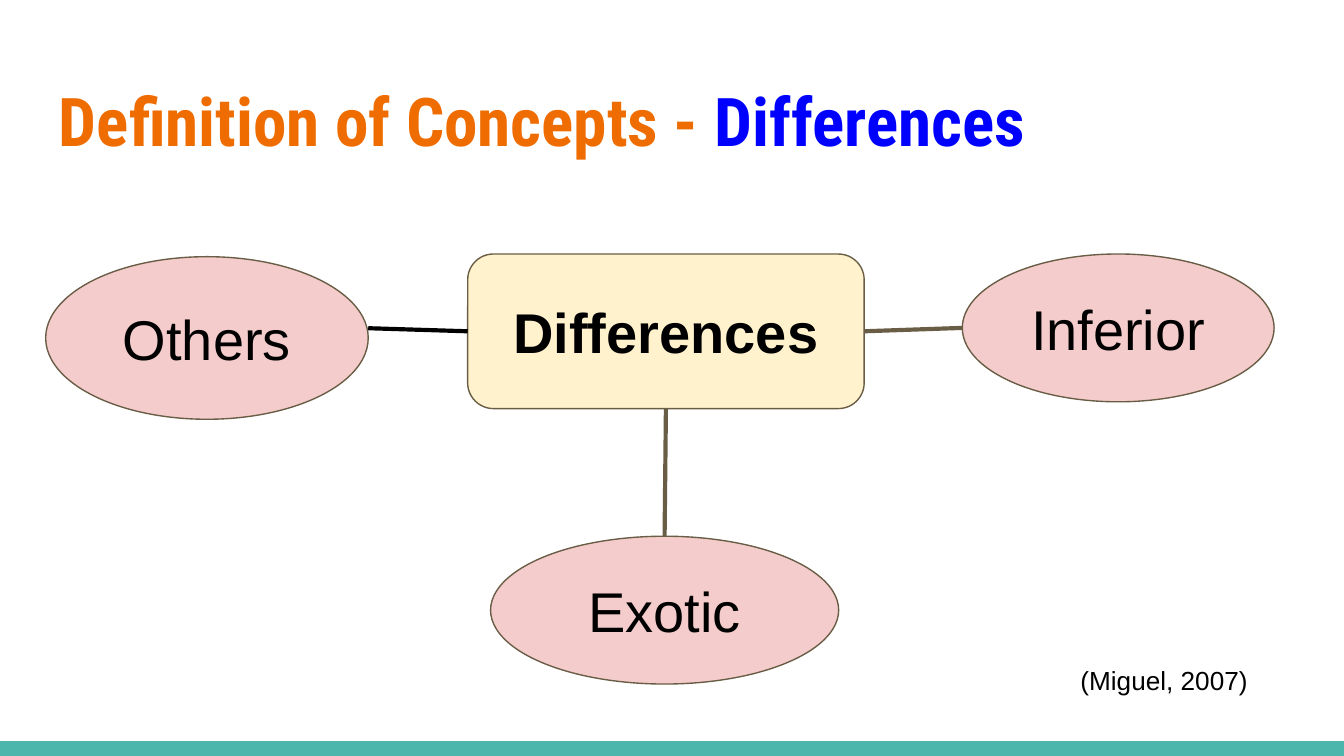
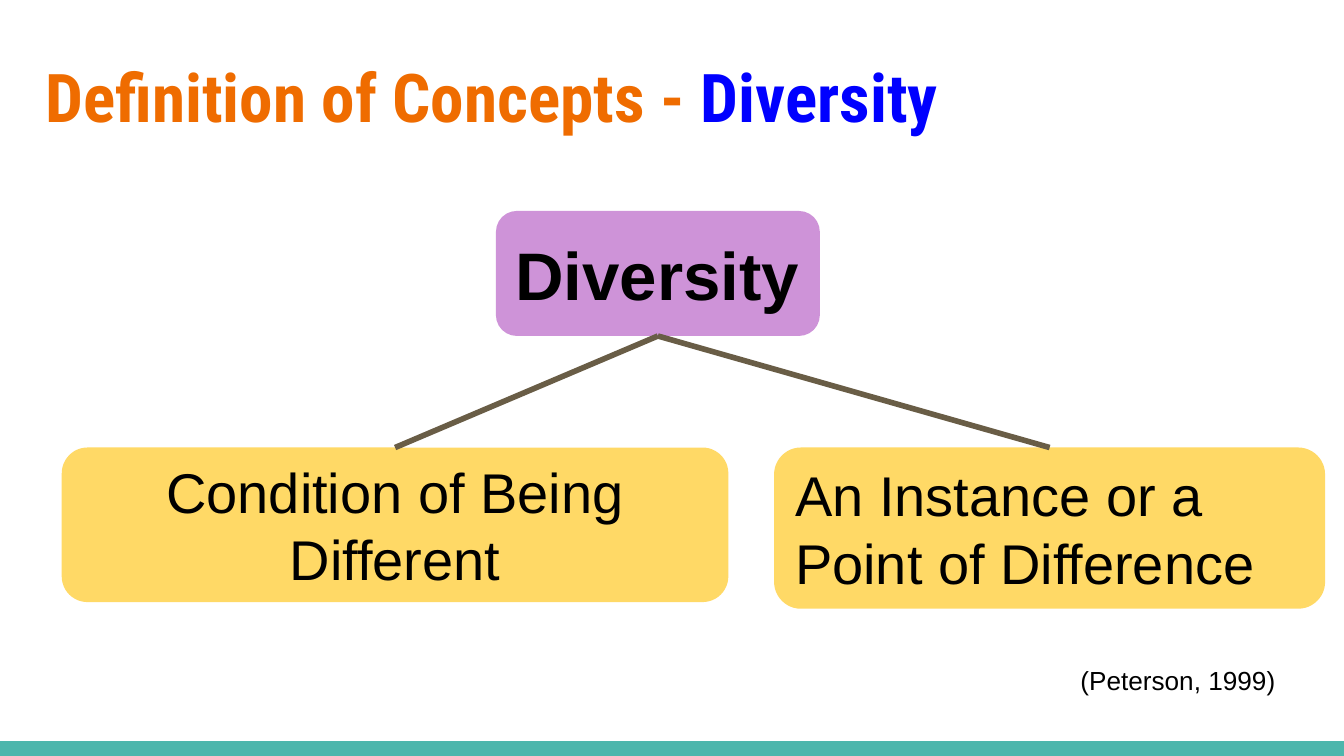
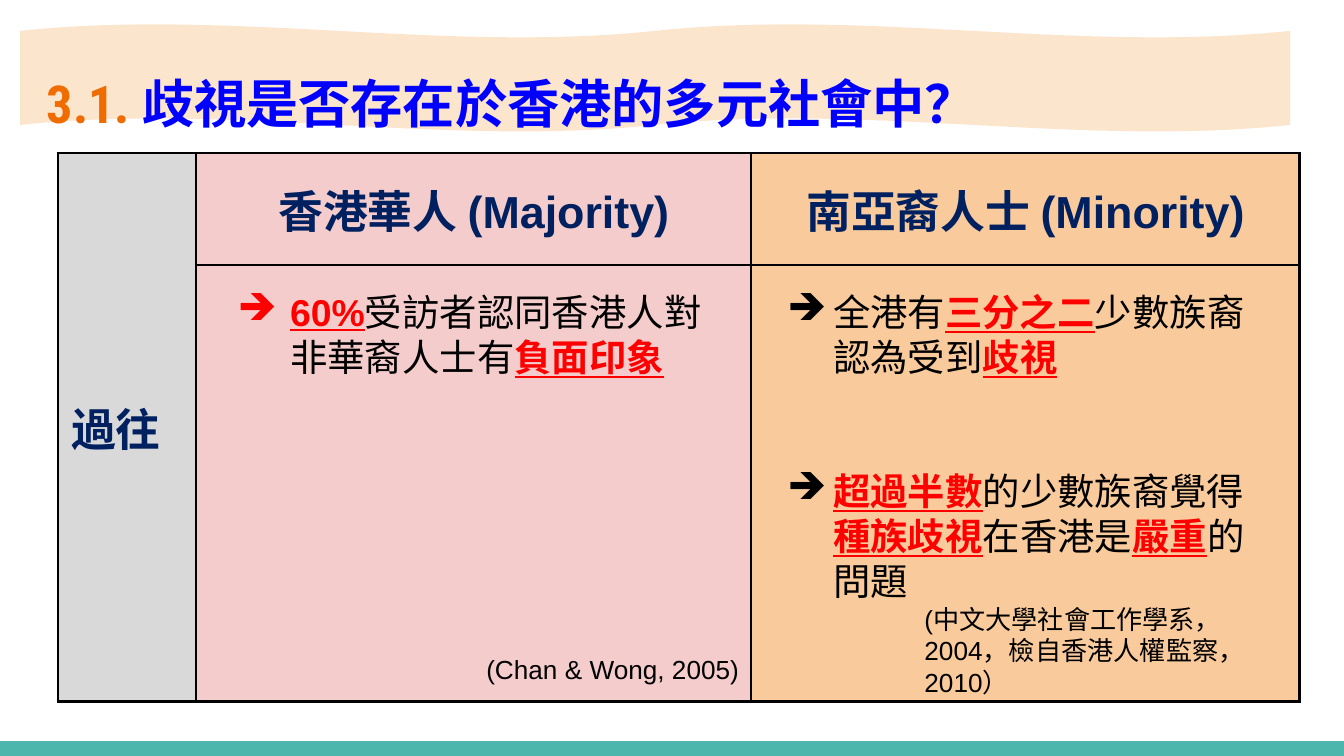
import pptx
import pptx.util
import pptx.dml.color
import pptx.enum.shapes
import pptx.enum.text
import pptx.oxml.ns
import lxml.etree

RGBColor = pptx.dml.color.RGBColor
SHAPES = pptx.enum.shapes.MSO_SHAPE
ALIGN = pptx.enum.text.PP_ALIGN
ANCHOR = pptx.enum.text.MSO_ANCHOR

BLACK = RGBColor(0x00, 0x00, 0x00)
ORANGE = RGBColor(0xEF, 0x6C, 0x00)
BLUE = RGBColor(0x00, 0x00, 0xFF)
RED = RGBColor(0xFF, 0x00, 0x00)
NAVY = RGBColor(0x00, 0x20, 0x60)
TEAL = RGBColor(0x4D, 0xB6, 0xAC)
BROWN = RGBColor(0x69, 0x5D, 0x46)
CREAM = RGBColor(0xFF, 0xF2, 0xCC)
PINK = RGBColor(0xF4, 0xCC, 0xCC)
PURPLE = RGBColor(0xCE, 0x93, 0xD8)
YELLOW = RGBColor(0xFF, 0xD9, 0x66)
GRAY = RGBColor(0xD9, 0xD9, 0xD9)
PEACH = RGBColor(0xF9, 0xCB, 0x9C)
PALE_PEACH = RGBColor(0xFC, 0xE5, 0xCD)

BODY_FONT = "Arial"
LIST_FONT = "Lato"
TITLE_FONT = "Roboto Condensed"

# The slide is a grid of 100 columns and 56.25 rows of square cells.
COLUMNS, ROWS = 100, 56.25
SLIDE_WIDTH = pptx.util.Inches(10)
UNIT = SLIDE_WIDTH / COLUMNS
BAND_ROWS = 1.1
CITATION_AREA = (79.4, 48.4, 17.2, 4.4)


def grid(*counts):
    """Turn counts of grid cells into lengths."""
    return [pptx.util.Emu(round(count * UNIT)) for count in counts]


def add_run(para, text, size, color=BLACK, bold=False, font=BODY_FONT, underline=False):
    span = para.add_run()
    span.text = text
    span.font.size = pptx.util.Pt(size)
    span.font.name = font
    span.font.bold = bold
    span.font.underline = underline
    span.font.color.rgb = color


def prepare_frame(frame, anchor):
    frame.word_wrap = True
    frame.vertical_anchor = anchor
    frame.margin_left = frame.margin_right = pptx.util.Inches(0.1)
    frame.margin_top = frame.margin_bottom = pptx.util.Inches(0.1)
    return frame


def add_text_frame(slide, area, anchor=ANCHOR.TOP):
    return prepare_frame(slide.shapes.add_textbox(*grid(*area)).text_frame, anchor)


def add_panel(slide, kind, area, fill, outline=None):
    panel = slide.shapes.add_shape(kind, *grid(*area))
    panel.shadow.inherit = False
    panel.fill.solid()
    panel.fill.fore_color.rgb = fill
    if outline is None:
        panel.line.fill.background()
    else:
        panel.line.color.rgb = outline
        panel.line.width = pptx.util.Pt(0.75)
    return panel


def add_node(slide, kind, area, text, fill, outline=None, size=30, bold=False,
             align=ALIGN.CENTER):
    node = add_panel(slide, kind, area, fill, outline)
    para = prepare_frame(node.text_frame, ANCHOR.MIDDLE).paragraphs[0]
    para.alignment = align
    add_run(para, text, size, bold=bold)
    return node


def edge_point(node, across, down):
    """Point at the given shares of a node's width and height."""
    return (node.left + round(node.width * across),
            node.top + round(node.height * down))


def add_link(slide, start, end, color=BROWN, width=2.25):
    link = slide.shapes.add_connector(
        pptx.enum.shapes.MSO_CONNECTOR.STRAIGHT, *start, *end)
    link.line.color.rgb = color
    link.line.width = pptx.util.Pt(width)
    lxml.etree.SubElement(link._element.spPr, pptx.oxml.ns.qn("a:effectLst"))


def add_title(slide, area, lead, topic, size=36):
    para = add_text_frame(slide, area).paragraphs[0]
    for text, color in ((lead, ORANGE), (topic, BLUE)):
        add_run(para, text, size, color, True, TITLE_FONT)
    return para


def add_citation(slide, text, area=CITATION_AREA, anchor=ANCHOR.MIDDLE):
    add_run(add_text_frame(slide, area, anchor).paragraphs[0], text, 14)


def add_arrow_bullet(para, indent, hanging, color):
    properties = para._p.get_or_add_pPr()
    properties.set("marL", str(pptx.util.Inches(indent)))
    properties.set("indent", str(-pptx.util.Inches(hanging)))
    bullet_color = lxml.etree.SubElement(properties, pptx.oxml.ns.qn("a:buClr"))
    lxml.etree.SubElement(bullet_color, pptx.oxml.ns.qn("a:srgbClr"), val=str(color))
    lxml.etree.SubElement(properties, pptx.oxml.ns.qn("a:buChar"), char="➔")


def add_findings(slide, area, findings, indent, hanging, bullet_color, font):
    """List findings; each is a list of (text, stressed) pairs."""
    frame = add_text_frame(slide, area)
    for index, finding in enumerate(findings):
        para = frame.add_paragraph() if index else frame.paragraphs[0]
        if index:
            para.space_before = pptx.util.Pt(48)
        add_arrow_bullet(para, indent, hanging, bullet_color)
        for text, stressed in finding:
            add_run(para, text, 20, RED if stressed else BLACK, stressed, font, stressed)


def style_cell(cell, fill):
    properties = cell._tc.get_or_add_tcPr()
    for side in ("lnL", "lnR", "lnT", "lnB"):
        border = lxml.etree.SubElement(properties, pptx.oxml.ns.qn("a:" + side),
                                       w=str(pptx.util.Pt(1.5)))
        paint = lxml.etree.SubElement(border, pptx.oxml.ns.qn("a:solidFill"))
        lxml.etree.SubElement(paint, pptx.oxml.ns.qn("a:srgbClr"), val=str(BLACK))
    cell.fill.solid()
    cell.fill.fore_color.rgb = fill
    cell.vertical_anchor = ANCHOR.MIDDLE
    cell.margin_left = cell.margin_right = pptx.util.Inches(0.1)
    cell.margin_top = cell.margin_bottom = pptx.util.Inches(0.1)


def add_group_table(slide, left, top, widths, heights, headings, fills):
    """Table whose first column is one tall cell naming the period."""
    table = slide.shapes.add_table(
        len(heights), len(widths),
        *grid(left, top, sum(widths), sum(heights))).table
    table.first_row = table.horz_banding = False
    for row, height in zip(table.rows, grid(*heights)):
        row.height = height
    for index, width in enumerate(grid(*widths)):
        table.columns[index].width = width
        for row in range(len(heights)):
            style_cell(table.cell(row, index), fills[index])
        para = table.cell(0, index).text_frame.paragraphs[0]
        para.alignment = ALIGN.CENTER if index else ALIGN.LEFT
        add_run(para, headings[index], 24, NAVY, True)
    table.cell(0, 0).merge(table.cell(len(heights) - 1, 0))


def add_page(deck):
    page = deck.slides.add_slide(deck.slide_layouts[6])
    add_panel(page, SHAPES.RECTANGLE, (0, ROWS - BAND_ROWS, COLUMNS, BAND_ROWS), TEAL)
    return page


def build_differences(page):
    add_title(page, (3.4, 4.9, 93.2, 7.7), "Definition of Concepts - ", "Differences")
    add_citation(page, "(Miguel, 2007)")
    center = add_node(page, SHAPES.ROUNDED_RECTANGLE, (34.8, 18.9, 29.5, 11.5),
                      "Differences", CREAM, BROWN, bold=True)
    others, inferior, exotic = [
        add_node(page, SHAPES.OVAL, area, text, PINK, BROWN)
        for text, area in (("Others", (3.4, 19.1, 24, 12.1)),
                           ("Inferior", (71.6, 18.9, 23.2, 11)),
                           ("Exotic", (36.5, 39.9, 25.9, 11)))]
    add_link(page, edge_point(others, 1, 0.44), edge_point(center, 0, 0.5), BLACK)
    add_link(page, edge_point(center, 0.5, 1), edge_point(exotic, 0.5, 0))
    add_link(page, edge_point(center, 1, 0.5), edge_point(inferior, 0, 0.5))


def build_diversity(page):
    add_title(page, (2.4, 3.1, 93.2, 7.7), "Definition of Concepts - ", "Diversity")
    root = add_node(page, SHAPES.ROUNDED_RECTANGLE, (36.9, 15.7, 24.1, 9.3),
                    "Diversity", PURPLE, size=36, bold=True, align=ALIGN.LEFT)
    meanings = (
        ("Condition of Being Different", (4.6, 33.3, 49.6, 11.5), ALIGN.CENTER),
        ("An Instance or a Point of Difference", (57.6, 33.3, 41, 12), ALIGN.LEFT))
    for text, area, align in meanings:
        meaning = add_node(page, SHAPES.ROUNDED_RECTANGLE, area, text, YELLOW, align=align)
        add_link(page, edge_point(root, 0.5, 1), edge_point(meaning, 0.5, 0), width=3)
    add_citation(page, "(Peterson, 1999)")


def build_discrimination(page):
    add_group_table(page, 4.3, 11.4, (10.3, 41.3, 40.8), (8.3, 32.5),
                    ("過往", "香港華人 (Majority)", "南亞裔人士 (Minority)"),
                    (GRAY, PINK, PEACH))
    add_panel(page, SHAPES.DOUBLE_WAVE, (1.5, 1.8, 94.5, 8), PALE_PEACH)
    add_citation(page, "(Chan & Wong, 2005)", (35.2, 47.6, 25, 3), ANCHOR.TOP)
    add_citation(page, "(中文大學社會工作學系，2004，檢自香港人權監察，2010）",
                 (67.8, 43.9, 28.1, 5), ANCHOR.TOP)
    minority = [
        [("全港有", False), ("三分之二", True), ("少數族裔認為受到", False), ("歧視", True)],
        [("超過半數", True), ("的少數族裔覺得", False), ("種族歧視", True),
         ("在香港是", False), ("嚴重", True), ("的問題", False)]]
    majority = [
        [("60%", True), ("受訪者認同香港人對非華裔人士有", False), ("負面印象", True)]]
    add_findings(page, (57.2, 20.5, 36.7, 24.3), minority, 0.38, 0.34, BLACK, LIST_FONT)
    add_findings(page, (15.6, 20.5, 38.9, 28.6), majority, 0.5, 0.39, RED, BODY_FONT)
    title = add_title(page, (2.5, 3.6, 80.2, 5.1), "3.1. ",
                      "歧視是否存在於香港的多元社會中？", 28)
    title.line_spacing = 1.15
    title.space_after = pptx.util.Pt(16)


def main():
    deck = pptx.Presentation()
    deck.slide_width, deck.slide_height = grid(COLUMNS, ROWS)
    for build in (build_differences, build_diversity, build_discrimination):
        build(add_page(deck))
    deck.save("out.pptx")


if __name__ == "__main__":
    main()
